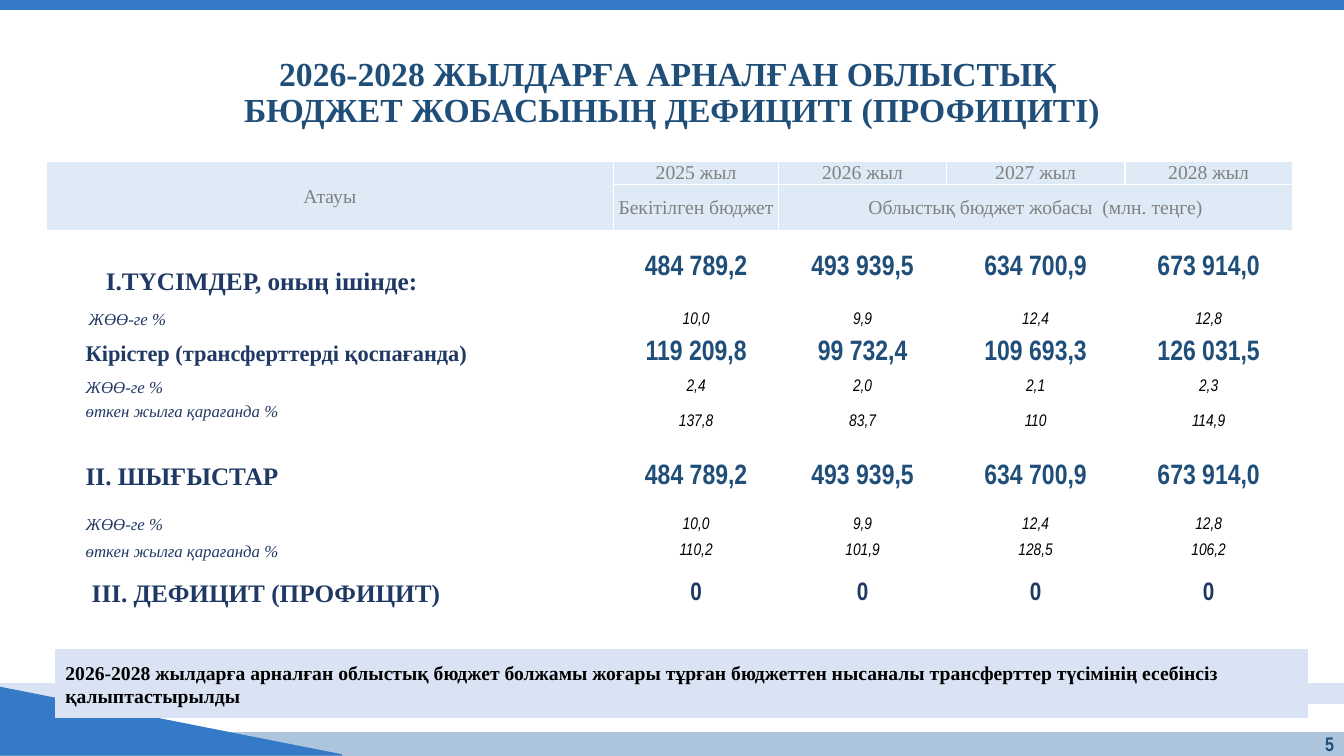
import pptx
import pptx.dml.color
import pptx.enum.shapes
import pptx.enum.text
import pptx.oxml
import pptx.oxml.ns
import pptx.util
from lxml import etree

SERIF, NARROW = "Times New Roman", "Arial Narrow"
BLUE, NAVY, INK = "347AC6", "203864", "1F4E79"
PALE, HEAD, WHITE = "DAE3F3", "DEEBF7", "FFFFFF"
MSO = pptx.enum.shapes.MSO_SHAPE
ALIGN = pptx.enum.text.PP_ALIGN
ANCHOR = pptx.enum.text.MSO_ANCHOR
INCH = pptx.util.Inches
WIDTH, HEIGHT = INCH(13.33), INCH(7.5)

COLUMNS = [5.62, 1.64, 1.66, 1.77, 1.66]
YEARS = ["2025 жыл", "2026 жыл", "2027 жыл", "2028 жыл"]
MAIN = dict(font=NARROW, size=20, color=INK, bold=True)
ZERO = dict(MAIN, size=18, color=NAVY)
RATIO = dict(font=NARROW, size=12, italic=True)
HEADING = dict(size=18, color=NAVY, bold=True)
SUBHEADING = dict(HEADING, size=16)
DETAIL = dict(size=12, color=NAVY, italic=True)
HEADER_ROWS = [0.23, 0.46]
LAST_ROW = 0.21
# height, label, label format, label indent, values, value format
BODY = [
    (0.73, "ТҮСІМДЕР, оның ішінде:", HEADING, 0.59,
     ["484 789,2", "493 939,5", "634 700,9", "673 914,0"], MAIN),
    (0.29, "ЖӨӨ-ге %", DETAIL, 0.42, ["10,0", "9,9", "12,4", "12,8"], RATIO),
    (0.38, "Кірістер (трансферттерді қоспағанда)", SUBHEADING, 0.39,
     ["119 209,8", "99 732,4", "109 693,3", "126 031,5"], MAIN),
    (0.29, "ЖӨӨ-ге %", DETAIL, 0.39, ["2,4", "2,0", "2,1", "2,3"], RATIO),
    (0.39, "өткен жылға қарағанда %", DETAIL, 0.39,
     ["137,8", "83,7", "110", "114,9"], RATIO),
    (0.70, "II. ШЫҒЫСТАР", HEADING, 0.39,
     ["484 789,2", "493 939,5", "634 700,9", "673 914,0"], MAIN),
    (0.26, "ЖӨӨ-ге %", DETAIL, 0.39, ["10,0", "9,9", "12,4", "12,8"], RATIO),
    (0.26, "өткен жылға қарағанда %", DETAIL, 0.39,
     ["110,2", "101,9", "128,5", "106,2"], RATIO),
    (0.58, "III. ДЕФИЦИТ (ПРОФИЦИТ)", HEADING, 0.45, ["0"] * 4, ZERO),
]


def rgb(value):
    return pptx.dml.color.RGBColor.from_string(value)


def box(x, y, w, h):
    """Turn percentages of the slide's size into lengths."""
    return [int(share * side / 100)
            for share, side in zip((x, y, w, h), (WIDTH, HEIGHT) * 2)]


def write(tf, text, font=SERIF, size=14, color="000000", bold=False,
          italic=False, align=ALIGN.LEFT, spacing=None):
    tf.word_wrap = True
    tf.vertical_anchor = ANCHOR.MIDDLE
    p = tf.paragraphs[0]
    p.text = text
    p.alignment = align
    p.line_spacing = spacing
    for r in p.runs:
        r.font.name, r.font.size = font, pptx.util.Pt(size)
        r.font.bold, r.font.italic = bold, italic
        r.font.color.rgb = rgb(color)


def add_block(slide, kind, area, color):
    sp = slide.shapes.add_shape(kind, *area)
    sp.shadow.inherit = False
    sp.fill.solid()
    sp.fill.fore_color.rgb = rgb(color)
    sp.line.color.rgb = rgb(color)
    sp.line.width = pptx.util.Pt(1)
    return sp


def add_backdrop(slide):
    add_block(slide, MSO.RECTANGLE, box(0, 96.93, 100, 3.07), "ACC5DC")
    add_block(slide, MSO.RECTANGLE, box(0, 90.4, 100, 2.67), PALE)
    add_block(slide, MSO.RIGHT_TRIANGLE, box(0, 90.93, 25.43, 8.93), BLUE)
    add_block(slide, MSO.RECTANGLE, box(0, 0, 100, 1.2), BLUE)


def add_title(slide, area):
    sp = slide.shapes.title
    sp.left, sp.top, sp.width, sp.height = area
    write(sp.text_frame, "2026-2028 ЖЫЛДАРҒА АРНАЛҒАН ОБЛЫСТЫҚ \v"
          "БЮДЖЕТ ЖОБАСЫНЫҢ ДЕФИЦИТІ (ПРОФИЦИТІ)", size=24, color=INK,
          bold=True, align=ALIGN.CENTER, spacing=0.9)


def set_borders(cell, color):
    tc_pr = cell._tc.get_or_add_tcPr()
    for i, side in enumerate(("lnL", "lnR", "lnT", "lnB")):
        ln = etree.Element(pptx.oxml.ns.qn("a:" + side), w="12700")
        fill = etree.SubElement(ln, pptx.oxml.ns.qn("a:solidFill"))
        etree.SubElement(fill, pptx.oxml.ns.qn("a:srgbClr"), val=color)
        tc_pr.insert(i, ln)


def fill_cell(cell, text, indent=0.01, **fmt):
    cell.margin_left = INCH(indent)
    cell.margin_right = cell.margin_top = INCH(0.01)
    cell.margin_bottom = 0
    write(cell.text_frame, text, **fmt)
    cell.vertical_anchor = ANCHOR.MIDDLE


def number_roman(p):
    p_pr = p._p.get_or_add_pPr()
    p_pr.set("marL", "0")
    p_pr.set("indent", "0")
    etree.SubElement(p_pr, pptx.oxml.ns.qn("a:buFont"), typeface=SERIF)
    etree.SubElement(p_pr, pptx.oxml.ns.qn("a:buAutoNum"),
                     type="romanUcPeriod")


def add_header(table):
    table.cell(0, 0).merge(table.cell(1, 0))
    table.cell(1, 2).merge(table.cell(1, 4))
    texts = {(0, 0): "Атауы", (1, 1): "Бекітілген бюджет",
             (1, 2): "Облыстық бюджет жобасы  (млн. теңге)"}
    texts.update({(0, c): year for c, year in enumerate(YEARS, 1)})
    for (row, col), text in texts.items():
        fill_cell(table.cell(row, col), text, color="808080",
                  align=ALIGN.CENTER)
    for row in range(2):
        for col in range(len(COLUMNS)):
            cell = table.cell(row, col)
            cell.fill.solid()
            cell.fill.fore_color.rgb = rgb(HEAD)
            set_borders(cell, WHITE)


def add_budget_table(slide, area):
    heights = HEADER_ROWS + [row[0] for row in BODY] + [LAST_ROW]
    table = slide.shapes.add_table(len(heights), len(COLUMNS), *area).table
    table.first_row = table.horz_banding = False
    for column, width in zip(table.columns, COLUMNS):
        column.width = int(area[2] * width / sum(COLUMNS))
    for row, height in zip(table.rows, heights):
        row.height = int(area[3] * height / sum(heights))
    for cell in table.iter_cells():
        cell.fill.background()
    add_header(table)
    for i, (_, label, label_fmt, indent, values, fmt) in enumerate(BODY, 2):
        fill_cell(table.cell(i, 0), label, indent, **label_fmt)
        for col, value in enumerate(values, 1):
            fill_cell(table.cell(i, col), value, align=ALIGN.CENTER, **fmt)
    receipts, growth = table.cell(2, 0), table.cell(6, 0)
    receipts.margin_top = INCH(0.28)
    number_roman(receipts.text_frame.paragraphs[0])
    growth.vertical_anchor = ANCHOR.TOP
    for col in range(len(COLUMNS)):
        cell = table.cell(len(heights) - 1, col)
        fill_cell(cell, "")
        cell.text_frame.paragraphs[0].font.size = pptx.util.Pt(10)


def add_page_number(slide, area):
    tf = slide.shapes.add_textbox(*area).text_frame
    tf.margin_top = tf.margin_bottom = 0
    write(tf, "5", font=NARROW, color=INK, bold=True, align=ALIGN.RIGHT,
          spacing=0.9)


def add_note(slide, area):
    sp = add_block(slide, MSO.RECTANGLE, area, PALE)
    write(sp.text_frame, "2026-2028 жылдарға арналған облыстық бюджет болжамы "
          "жоғары тұрған бюджеттен нысаналы трансферттер түсімінің есебінсіз "
          "қалыптастырылды", bold=True)


def main():
    prs = pptx.Presentation()
    prs.slide_width, prs.slide_height = WIDTH, HEIGHT
    slide = prs.slides.add_slide(prs.slide_layouts[5])
    add_backdrop(slide)
    add_title(slide, box(1.65, 9.2, 96.7, 6.27))
    add_budget_table(slide, box(3.45, 21.33, 92.72, 63.87))
    add_page_number(slide, box(94.67, 97.2, 5.33, 2.8))
    add_note(slide, box(4.13, 86, 93.17, 8.93))
    prs.save("out.pptx")


if __name__ == "__main__":
    main()
